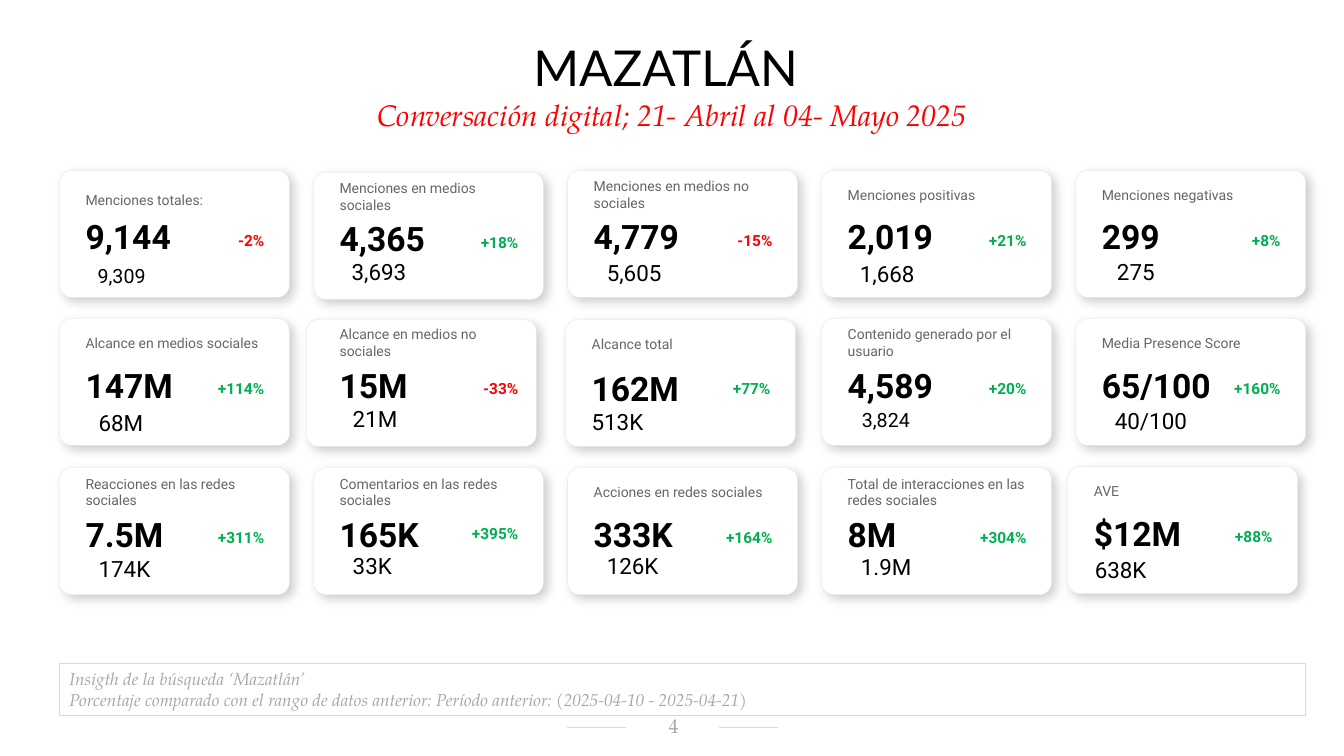
"""Build the Mazatlán digital conversation dashboard slide."""
from lxml import etree
from pptx import Presentation
from pptx.dml.color import RGBColor
from pptx.enum import shapes, text
from pptx.oxml import ns, parse_xml
from pptx.util import Inches, Pt

SERIF = "TeX Gyre Pagella"
LEFT, CENTER, RIGHT = text.PP_ALIGN.LEFT, text.PP_ALIGN.CENTER, text.PP_ALIGN.RIGHT
SHADOW = (
    f'<a:effectLst {ns.nsdecls("a")}><a:outerShdw blurRad="{Pt(8)}" dist="{Pt(4)}"'
    ' dir="2700000" algn="tl" rotWithShape="0"><a:srgbClr val="000000">'
    '<a:alpha val="20000"/></a:srgbClr></a:outerShdw></a:effectLst>'
)


def style(paragraph, size, color, name="Roboto", bold=False, italic=False, align=LEFT):
    paragraph.alignment = align
    font = paragraph.font
    font.size, font.name, font.bold, font.italic = Pt(size), name, bold, italic
    font.color.rgb = RGBColor.from_string(color)


def add_text(slide, words, left, top, width, height, size, color, **options):
    box = slide.shapes.add_textbox(Inches(left), Inches(top), Inches(width), Inches(height))
    frame = box.text_frame
    frame.word_wrap = True
    frame.vertical_anchor = text.MSO_ANCHOR.MIDDLE
    frame.text = words
    style(frame.paragraphs[0], size, color, **options)
    return frame


presentation = Presentation()
presentation.slide_width, presentation.slide_height = Inches(13.33), Inches(7.5)
slide = presentation.slides.add_slide(presentation.slide_layouts[5])

title = slide.shapes.title
title.left, title.top, title.width, title.height = Inches(0), Inches(0.32), Inches(13.33), Inches(1.05)
frame = title.text_frame
frame.text = "MAZATLÁN \nConversación digital; 21- Abril al 04- Mayo 2025"
frame.vertical_anchor = text.MSO_ANCHOR.TOP
frame.auto_size = text.MSO_AUTO_SIZE.SHAPE_TO_FIT_TEXT
style(frame.paragraphs[0], 35.3, "000000", "Lato", align=CENTER)
style(frame.paragraphs[1], 21.2, "FF0000", SERIF, italic=True, align=CENTER)

# Each metric: label, value, change, then previous value with its left, top, width and size.
metric_rows = [
    (1.69, [
        ("Menciones totales:", "9,144", "-2%", ("9,309", 0.87, 2.52, 0.83, 14)),
        ("Menciones en medios sociales", "4,365", "+18%", ("3,693", 3.39, 2.48, 1.06, 16)),
        ("Menciones en medios no sociales", "4,779", "-15%", ("5,605", 5.92, 2.49, 1.29, 16)),
        ("Menciones positivas", "2,019", "+21%", ("1,668", 8.43, 2.5, 1.29, 16)),
        ("Menciones negativas", "299", "+8%", ("275", 10.98, 2.48, 0.72, 16)),
    ]),
    (3.16, [
        ("Alcance en medios sociales", "147M", "+114%", ("68M", 0.88, 3.98, 0.67, 16)),
        ("Alcance en medios no sociales", "15M", "-33%", ("21M", 3.4, 3.94, 1.24, 16)),
        ("Alcance total", "162M", "+77%", ("513K", 5.77, 3.97, 0.87, 16)),
        ("Contenido generado por el usuario", "4,589", "+20%", ("3,824", 8.45, 3.95, 1.4, 14)),
        ("Media Presence Score", "65/100", "+160%", ("40/100", 10.96, 3.96, 1.14, 16)),
    ]),
    (4.64, [
        ("Reacciones en las redes sociales", "7.5M", "+311%", ("174K", 0.88, 5.43, 0.8, 16)),
        ("Comentarios en las redes sociales", "165K", "+395%", ("33K", 3.4, 5.4, 0.68, 16)),
        ("Acciones en redes sociales", "333K", "+164%", ("126K", 5.92, 5.4, 1.13, 16)),
        ("Total de interacciones en las redes sociales", "8M", "+304%", ("1.9M", 8.44, 5.41, 1.24, 16)),
        ("AVE", "$12M", "+88%", ("638K", 10.76, 5.44, 0.87, 16)),
    ]),
]
metric_shifts = {"4,365": (0, 0.02), "162M": (-0.02, 0.01), "$12M": (-0.08, -0.01)}
card_shifts = {"15M": (-0.07, 0.01)}
label_heights = {"9,144": 0.35}
value_offsets = {"162M": 0.48}
change_offsets = {"162M": 0.49, "165K": 0.46}

for row_top, metrics in metric_rows:
    for column, (label, value, change, previous) in enumerate(metrics):
        shift_x, shift_y = metric_shifts.get(value, (0, 0))
        left, top = 0.59 + 2.52 * column + shift_x, row_top + shift_y
        card_x, card_y = card_shifts.get(value, (0, 0))
        card = slide.shapes.add_shape(
            shapes.MSO_SHAPE.ROUNDED_RECTANGLE,
            Inches(left + card_x), Inches(top + card_y), Inches(2.28), Inches(1.26))
        card.adjustments[0] = 0.095
        card.fill.solid()
        card.fill.fore_color.rgb = RGBColor.from_string("FFFFFF")
        card.line.color.rgb = RGBColor.from_string("E6E6E6")
        card.line.width = Pt(0.25)
        card.element.spPr.append(parse_xml(SHADOW))

        text_left = left + 0.16
        add_text(slide, label, text_left, top + 0.12, 1.97,
                 label_heights.get(value, 0.24), 10, "666666")
        add_text(slide, value, text_left, top + value_offsets.get(value, 0.46),
                 1.37, 0.39, 24, "000000", bold=True)
        add_text(slide, change, text_left, top + change_offsets.get(value, 0.5), 1.97, 0.39,
                 11, "00B050" if change.startswith("+") else "FF0000", bold=True, align=RIGHT)
        words, previous_left, previous_top, width, size = previous
        add_text(slide, words, previous_left, previous_top, width, 0.42, size, "000000")

note = slide.shapes.add_shape(
    shapes.MSO_SHAPE.RECTANGLE, Inches(0.59), Inches(6.58), Inches(12.36), Inches(0.52))
note.shadow.inherit = False
note.fill.background()
note.line.color.rgb = RGBColor.from_string("D9D9D9")
note.line.width = Pt(0.75)
frame = note.text_frame
frame.word_wrap = True
frame.auto_size = text.MSO_AUTO_SIZE.SHAPE_TO_FIT_TEXT
frame.vertical_anchor = text.MSO_ANCHOR.TOP
frame.text = (
    "Insigth de la búsqueda ‘Mazatlán’\n"
    "Porcentaje comparado con el rango de datos anterior: "
    "Período anterior: (2025-04-10 - 2025-04-21)")
for paragraph in frame.paragraphs:
    style(paragraph, 12.3, "A6A6A6", SERIF, italic=True)

for start in (5.62, 7.13):
    rule = slide.shapes.add_connector(
        shapes.MSO_CONNECTOR.STRAIGHT, Inches(start), Inches(7.22), Inches(start + 0.59), Inches(7.22))
    rule.line.color.rgb = RGBColor.from_string("D9D9D9")
    rule.line.width = Pt(0.5)
    etree.SubElement(rule.element.spPr, ns.qn("a:effectLst"))

frame = add_text(slide, "4", 6.2, 7.1, 0.94, 0.23, 14.1, "A6A6A6", name=SERIF, align=CENTER)
frame.margin_left, frame.margin_top = Inches(0.12), Inches(0.02)

presentation.save("out.pptx")
